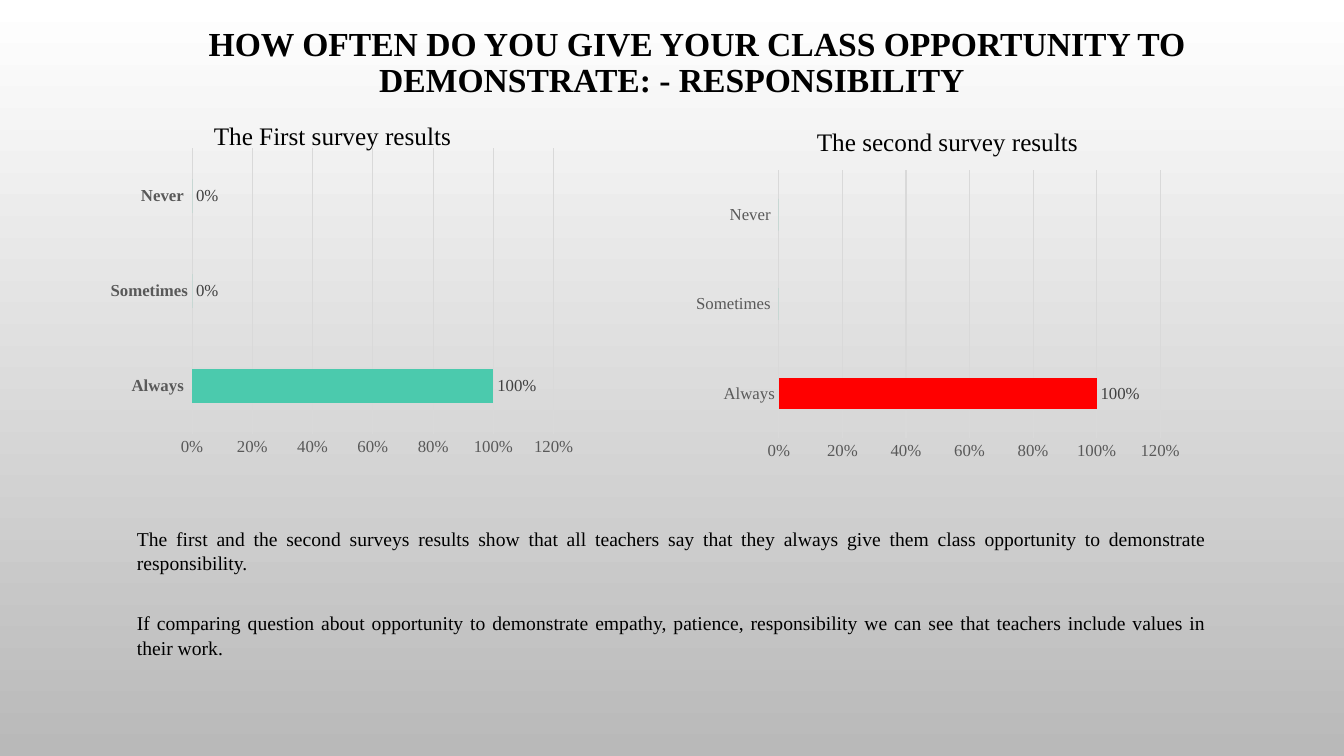
from pptx import Presentation
from pptx.chart.data import CategoryChartData
from pptx.dml.color import RGBColor
from pptx.enum.chart import XL_CHART_TYPE as ChartType, XL_LABEL_POSITION as LabelPosition
from pptx.enum.chart import XL_TICK_MARK as TickMark
from pptx.enum.text import MSO_ANCHOR as Anchor, MSO_AUTO_SIZE as AutoSize, PP_ALIGN as Align
from pptx.util import Pt

PX = 12192000 / 1344
FONT = "Times New Roman"
BLACK = RGBColor(0x00, 0x00, 0x00)
WHITE = RGBColor(0xFF, 0xFF, 0xFF)
SILVER = RGBColor(0xB9, 0xB9, 0xB9)
GRID_GRAY = RGBColor(0xD9, 0xD9, 0xD9)
AXIS_GRAY = RGBColor(0x59, 0x59, 0x59)
LABEL_GRAY = RGBColor(0x40, 0x40, 0x40)
TEAL = RGBColor(0x4B, 0xCA, 0xAD)
RED = RGBColor(0xFF, 0x00, 0x00)


def px(*lengths):
    return [round(length * PX) for length in lengths]


class SurveySlide:
    def __init__(self, presentation):
        self.slide = presentation.slides.add_slide(presentation.slide_layouts[5])

    def style_font(self, font, size, color=BLACK, bold=False):
        font.name = FONT
        font.size = Pt(size)
        font.color.rgb = color
        font.bold = bold

    def background(self, *colors):
        fill = self.slide.background.fill
        fill.gradient()
        fill.gradient_angle = 270
        for stop, color in zip(fill.gradient_stops, colors):
            stop.color.rgb = color

    def title(self, box, text):
        shape = self.slide.shapes.title
        shape.left, shape.top, shape.width, shape.height = px(*box)
        frame = shape.text_frame
        frame.text = text
        frame.word_wrap = True
        frame.auto_size = AutoSize.NONE
        frame.vertical_anchor = Anchor.MIDDLE
        paragraph = frame.paragraphs[0]
        paragraph.alignment = Align.CENTER
        paragraph.line_spacing = 0.9
        self.style_font(paragraph.font, 24, bold=True)

    def text(self, box, text, size, alignment=Align.LEFT):
        frame = self.slide.shapes.add_textbox(*px(*box)).text_frame
        frame.word_wrap = True
        frame.text = text
        for paragraph in frame.paragraphs:
            paragraph.alignment = alignment
            self.style_font(paragraph.font, size)
        return frame.paragraphs

    def style_axis(self, axis, bold=False):
        axis.major_tick_mark = axis.minor_tick_mark = TickMark.NONE
        self.style_font(axis.tick_labels.font, 12, AXIS_GRAY, bold)

    def style_line(self, line):
        line.color.rgb = GRID_GRAY
        line.width = Pt(0.75)

    def bar_chart(self, box, categories, bold_categories=False, label_all=False, first_color=None):
        data = CategoryChartData(number_format="0%")
        data.categories = categories
        data.add_series("Series 1", (1, 0, 0))
        chart = self.slide.shapes.add_chart(ChartType.BAR_CLUSTERED, *px(*box), data).chart
        chart.has_title = chart.has_legend = False
        self.style_font(chart.font, 12)

        self.style_axis(chart.category_axis, bold_categories)
        self.style_line(chart.category_axis.format.line)
        value_axis = chart.value_axis
        self.style_axis(value_axis)
        value_axis.minimum_scale, value_axis.maximum_scale, value_axis.major_unit = 0, 1.2, 0.2
        value_axis.format.line.fill.background()
        self.style_line(value_axis.major_gridlines.format.line)
        value_axis.tick_labels.number_format = "0%"
        value_axis.tick_labels.number_format_is_linked = False

        plot = chart.plots[0]
        plot.gap_width = 182
        plot.vary_by_categories = False
        series = plot.series[0]
        series.format.fill.solid()
        series.format.fill.fore_color.rgb = TEAL
        if first_color is not None:
            fill = series.points[0].format.fill
            fill.solid()
            fill.fore_color.rgb = first_color

        series.data_labels.show_value = label_all
        label = series.data_labels if label_all else series.points[0].data_label
        label.position = LabelPosition.OUTSIDE_END
        self.style_font(label.font, 12, LABEL_GRAY)


def main():
    presentation = Presentation()
    presentation.slide_width, presentation.slide_height = px(1344, 756)
    survey = SurveySlide(presentation)
    survey.background(WHITE, SILVER)
    survey.title((101, 19, 1142, 89),
                 "\tHOW OFTEN DO YOU GIVE YOUR CLASS OPPORTUNITY TO DEMONSTRATE: - RESPONSIBILITY")
    survey.bar_chart((101, 142, 482, 320), ("Always ", "Sometimes", "Never "),
                     bold_categories=True, label_all=True)
    first, second = survey.text(
        (127, 522, 1090, 180),
        "The first and the second surveys results show that all teachers say that they always "
        "give them class opportunity to demonstrate responsibility.\n"
        "If comparing question about opportunity to demonstrate empathy, patience, responsibility "
        "we can see that teachers include values in their work.",
        14, Align.JUSTIFY)
    second.line_spacing = 1.07
    second.space_before = Pt(25)
    survey.text((204, 115, 315, 40), "The First survey results", 18)
    survey.text((807, 121, 315, 40), "The second survey results", 18)
    survey.bar_chart((686, 164, 504, 302), (" Always", "Sometimes ", "Never "), first_color=RED)
    presentation.save("out.pptx")


if __name__ == "__main__":
    main()
